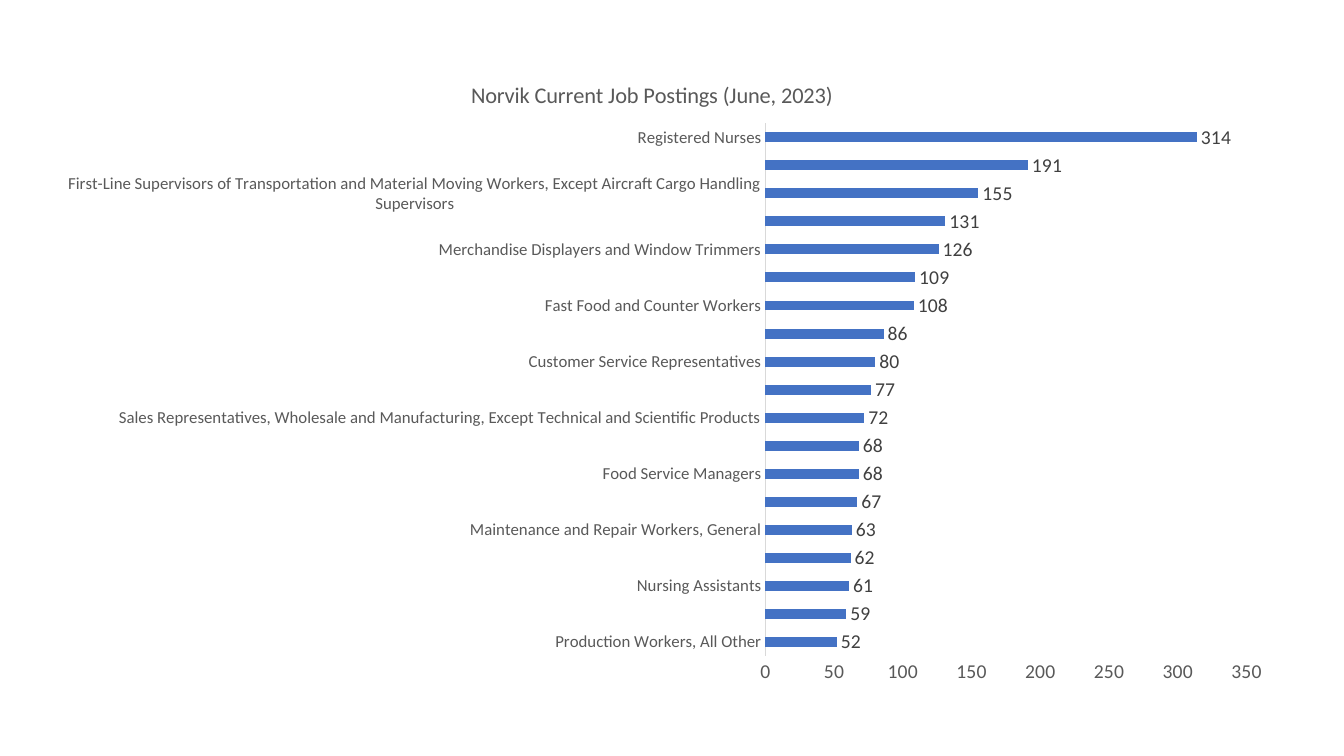
from dataclasses import dataclass

import pptx
import pptx.chart.data
import pptx.dml.color
import pptx.enum.chart
import pptx.oxml
import pptx.oxml.ns
import pptx.util
from pptx.util import Inches


@dataclass(frozen=True)
class Theme:
    font: str = "Calibri"
    bar: str = "4472C4"
    muted: str = "595959"
    label: str = "404040"
    axis: str = "D9D9D9"
    title_size: int = 16
    value_size: int = 14
    category_size: int = 12


theme = Theme()

# Listed from the bottom bar to the top bar
job_postings = [
    ("Production Workers, All Other", 52),
    ("Janitors and Cleaners, Except Maids and Housekeeping Cleaners", 59),
    ("Nursing Assistants", 61),
    ("Environmental Scientists and Specialists, Including Health", 62),
    ("Maintenance and Repair Workers, General", 63),
    ("Laborers and Freight, Stock, and Material Movers, Hand", 67),
    ("Food Service Managers", 68),
    ("Health Technologists and Technicians, All Other", 68),
    ("Sales Representatives, Wholesale and Manufacturing, "
     "Except Technical and Scientific Products", 72),
    ("Financial and Investment Analysts", 77),
    ("Customer Service Representatives", 80),
    ("Stockers and Order Fillers", 86),
    ("Fast Food and Counter Workers", 108),
    ("Security Guards", 109),
    ("Merchandise Displayers and Window Trimmers", 126),
    ("Managers, All Other", 131),
    ("First-Line Supervisors of Transportation and Material Moving Workers, "
     "Except Aircraft Cargo Handling Supervisors", 155),
    ("Retail Salespersons", 191),
    ("Registered Nurses", 314),
]


def style_font(font, size, color):
    font.name = theme.font
    font.size = pptx.util.Pt(size)
    font.bold = False
    font.color.rgb = pptx.dml.color.RGBColor.from_string(color)


def set_layout(parent, **fractions):
    """Place a chart part by fractions of the chart area."""
    for old_layout in parent.findall(pptx.oxml.ns.qn("c:layout")):
        parent.remove(old_layout)
    target = '<c:layoutTarget val="inner"/>' if "w" in fractions else ""
    modes = '<c:xMode val="edge"/><c:yMode val="edge"/>'
    values = "".join(f'<c:{name} val="{value}"/>' for name, value in fractions.items())
    layout = pptx.oxml.parse_xml(
        f'<c:layout {pptx.oxml.ns.nsdecls("c")}>'
        f"<c:manualLayout>{target}{modes}{values}</c:manualLayout></c:layout>"
    )
    text = parent.find(pptx.oxml.ns.qn("c:tx"))
    parent.insert(0 if text is None else 1, layout)


presentation = pptx.Presentation()
presentation.slide_width = Inches(13.33)
presentation.slide_height = Inches(7.5)
slide = presentation.slides.add_slide(presentation.slide_layouts[6])

chart_data = pptx.chart.data.CategoryChartData()
chart_data.categories = [occupation for occupation, count in job_postings]
chart_data.add_series("Series 1", [count for occupation, count in job_postings])
chart = slide.shapes.add_chart(
    pptx.enum.chart.XL_CHART_TYPE.BAR_CLUSTERED,
    Inches(0.44), Inches(0.49), Inches(12.33), Inches(6.43), chart_data,
).chart
chart.has_legend = False
style_font(chart.font, theme.value_size, "000000")

chart.has_title = True
title_run = chart.chart_title.text_frame.paragraphs[0].add_run()
title_run.text = "Norvik Current Job Postings (June, 2023)"
style_font(title_run.font, theme.title_size, theme.muted)
chart.chart_title.include_in_layout = False

plot = chart.plots[0]
plot.gap_width = 182
plot.vary_by_categories = False
bars = plot.series[0]
bars.format.fill.solid()
bars.format.fill.fore_color.rgb = pptx.dml.color.RGBColor.from_string(theme.bar)
labels = bars.data_labels
labels.show_value = True
labels.position = pptx.enum.chart.XL_LABEL_POSITION.OUTSIDE_END
style_font(labels.font, theme.value_size, theme.label)

for axis, size in ((chart.category_axis, theme.category_size),
                   (chart.value_axis, theme.value_size)):
    axis.has_major_gridlines = False
    axis.major_tick_mark = pptx.enum.chart.XL_TICK_MARK.NONE
    axis.minor_tick_mark = pptx.enum.chart.XL_TICK_MARK.NONE
    style_font(axis.tick_labels.font, size, theme.muted)

category_line = chart.category_axis.format.line
category_line.color.rgb = pptx.dml.color.RGBColor.from_string(theme.axis)
category_line.width = pptx.util.Pt(0.75)
chart.value_axis.format.line.fill.background()
chart.value_axis.minimum_scale = 0
chart.value_axis.maximum_scale = 350
chart.value_axis.major_unit = 50

chart_element = chart.element.find(pptx.oxml.ns.qn("c:chart"))
set_layout(chart_element.find(pptx.oxml.ns.qn("c:title")), x=0.34, y=0.04)
set_layout(chart_element.find(pptx.oxml.ns.qn("c:plotArea")),
           x=0.58, y=0.114, w=0.387, h=0.822)

presentation.save("out.pptx")
